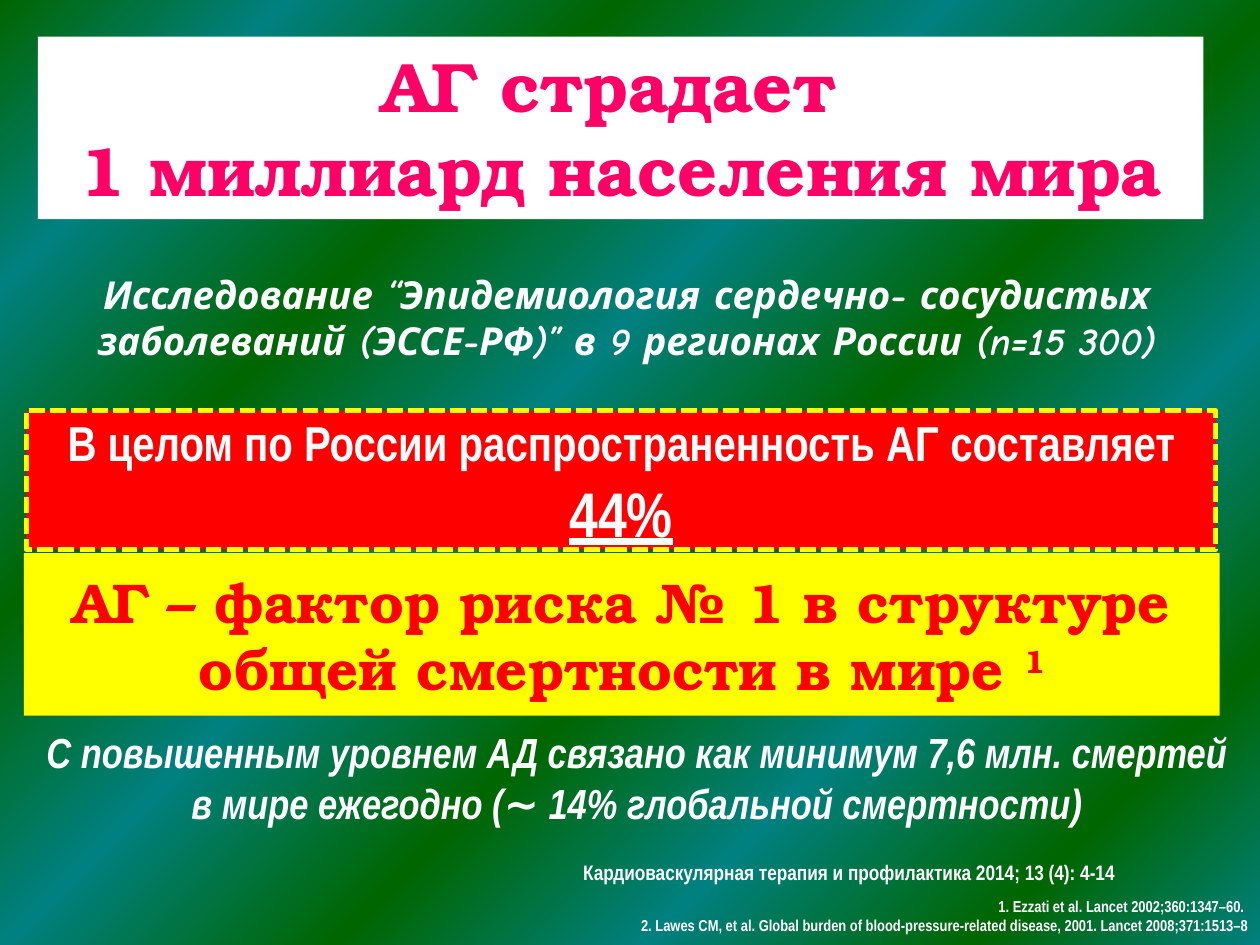
from copy import deepcopy
from dataclasses import dataclass

from pptx import Presentation
from pptx.dml.color import RGBColor
from pptx.enum.dml import MSO_LINE
from pptx.enum.shapes import MSO_SHAPE
from pptx.enum.text import MSO_ANCHOR, MSO_AUTO_SIZE, PP_ALIGN
from pptx.util import Inches, Pt

TOP, MIDDLE, BOTTOM = MSO_ANCHOR.TOP, MSO_ANCHOR.MIDDLE, MSO_ANCHOR.BOTTOM
LEFT, CENTER, RIGHT = PP_ALIGN.LEFT, PP_ALIGN.CENTER, PP_ALIGN.RIGHT
RECTANGLE = MSO_SHAPE.RECTANGLE
DASH = MSO_LINE.SQUARE_DOT
FIXED = MSO_AUTO_SIZE.NONE
COLUMNS, ROWS = 100, 75
CELL = Inches(0.1)


@dataclass(frozen=True)
class Theme:
    serif: str = "TeX Gyre Bonum"
    narrow: str = "Arial Narrow"
    comic: str = "Comic Neue"
    white: str = "FFFFFF"
    yellow: str = "FFFF00"
    red: str = "FF0000"
    pink: str = "FF0066"
    green: str = "006600"
    teal: str = "008080"
    title: int = 40
    figure: int = 36
    risk: int = 32
    prevalence: int = 28
    deaths: int = 24
    study: int = 22
    journal: int = 12
    references: int = 9


THEME = Theme()


@dataclass(frozen=True)
class Area:
    column: float
    row: float
    columns: float
    rows: float

    def lengths(self) -> tuple:
        cells = (self.column, self.row, self.columns, self.rows)
        return tuple(round(cell * CELL) for cell in cells)


@dataclass(frozen=True)
class Span:
    text: str
    size: int
    underline: bool = False
    superscript: bool = False


@dataclass(frozen=True)
class Block:
    area: Area
    paragraphs: tuple
    font: str
    color: str = THEME.white
    fill: str | None = None
    border: str | None = None
    italic: bool = False
    align: PP_ALIGN = CENTER
    anchor: MSO_ANCHOR = TOP
    spacing: float = 1.0
    is_title: bool = False


BLOCKS = (
    Block(Area(26.9, 70.7, 73.1, 4),
          ((Span("1. Ezzati et al. Lancet 2002;360:1347–60. \n"
                 "2. Lawes CM, et al. Global burden of blood-pressure-related disease, 2001. "
                 "Lancet 2008;371:1513–8", THEME.references),),),
          THEME.narrow, align=RIGHT, anchor=BOTTOM),
    Block(Area(1.9, 43.9, 94.9, 12.9),
          ((Span("АГ – фактор риска № 1 в структуре общей смертности в мире ", THEME.risk),
            Span("1", THEME.risk, superscript=True)),),
          THEME.serif, THEME.red, fill=THEME.yellow, anchor=MIDDLE),
    Block(Area(3, 2.9, 92.5, 14.5),
          ((Span("АГ страдает ", THEME.title),),
           (Span("1 миллиард населения мира", THEME.title),)),
          THEME.serif, THEME.pink, fill=THEME.white, is_title=True),
    Block(Area(2.1, 57.2, 96.9, 9.1),
          ((Span("С повышенным уровнем АД связано как минимум 7,6 млн. смертей "
                 "в мире ежегодно (∼ 14% глобальной смертности)", THEME.deaths),),),
          THEME.narrow, italic=True),
    Block(Area(1.9, 21, 95.7, 8.4),
          ((Span("Исследование “Эпидемиология сердечно- сосудистых "
                 "заболеваний (ЭССЕ-РФ)” в 9 регионах России (n=15 300)", THEME.study),),),
          THEME.comic, italic=True),
    Block(Area(2.1, 32.6, 94.4, 11),
          ((Span("В целом по России распространенность АГ составляет ", THEME.prevalence),
            Span("44%", THEME.figure, underline=True)),),
          THEME.narrow, fill=THEME.red, border=THEME.yellow, anchor=MIDDLE, spacing=1.05),
    Block(Area(45.3, 67.7, 54.7, 3),
          ((Span("Кардиоваскулярная терапия и профилактика 2014; 13 (4): 4-14",
                 THEME.journal),),),
          THEME.narrow, align=LEFT),
)


def paint_background(page) -> None:
    fill = page.background.fill
    fill.gradient()
    fill.gradient_angle = 315
    stop_list = page.background._cSld.xpath(".//a:gsLst")[0]
    positions = (0, 13, 28, 43, 58, 72, 87, 100)
    for _ in range(len(positions) - len(stop_list)):
        stop_list.append(deepcopy(stop_list[0]))
    for index, (stop, position) in enumerate(zip(fill.gradient_stops, positions)):
        stop.position = position / 100
        stop.color.rgb = RGBColor.from_string(THEME.teal if index % 2 else THEME.green)


def write_span(paragraph, span: Span, *, font: str, color: str, italic: bool) -> None:
    for index, line in enumerate(span.text.split("\n")):
        if index:
            paragraph.add_line_break()
        run = paragraph.add_run()
        run.text = line
        run.font.name = font
        run.font.size = Pt(span.size)
        run.font.color.rgb = RGBColor.from_string(color)
        run.font.bold = True
        run.font.italic = italic
        run.font.underline = span.underline
        if span.superscript:
            run.font._element.set("baseline", "30000")


def write_text(frame, block: Block) -> None:
    frame.word_wrap = True
    frame.auto_size = FIXED
    frame.vertical_anchor = block.anchor
    for index, spans in enumerate(block.paragraphs):
        paragraph = frame.add_paragraph() if index else frame.paragraphs[0]
        paragraph.alignment = block.align
        paragraph.line_spacing = block.spacing
        for span in spans:
            write_span(paragraph, span, font=block.font, color=block.color,
                       italic=block.italic)


def add_box(page, block: Block):
    lengths = block.area.lengths()
    if block.is_title:
        box = page.shapes.title
        box.left, box.top, box.width, box.height = lengths
        page.shapes._spTree.append(box._element)
        return box
    if block.fill is None:
        return page.shapes.add_textbox(*lengths)
    box = page.shapes.add_shape(RECTANGLE, *lengths)
    box.shadow.inherit = False
    return box


def draw_block(page, block: Block) -> None:
    box = add_box(page, block)
    if block.fill:
        box.fill.solid()
        box.fill.fore_color.rgb = RGBColor.from_string(block.fill)
    if block.border:
        box.line.color.rgb = RGBColor.from_string(block.border)
        box.line.width = Pt(3)
        box.line.dash_style = DASH
    else:
        box.line.fill.background()
    write_text(box.text_frame, block)


def main() -> None:
    deck = Presentation()
    deck.slide_width, deck.slide_height = COLUMNS * CELL, ROWS * CELL
    page = deck.slides.add_slide(deck.slide_layouts.get_by_name("Title Only"))
    paint_background(page)
    for block in BLOCKS:
        draw_block(page, block)
    deck.save("out.pptx")


if __name__ == "__main__":
    main()
